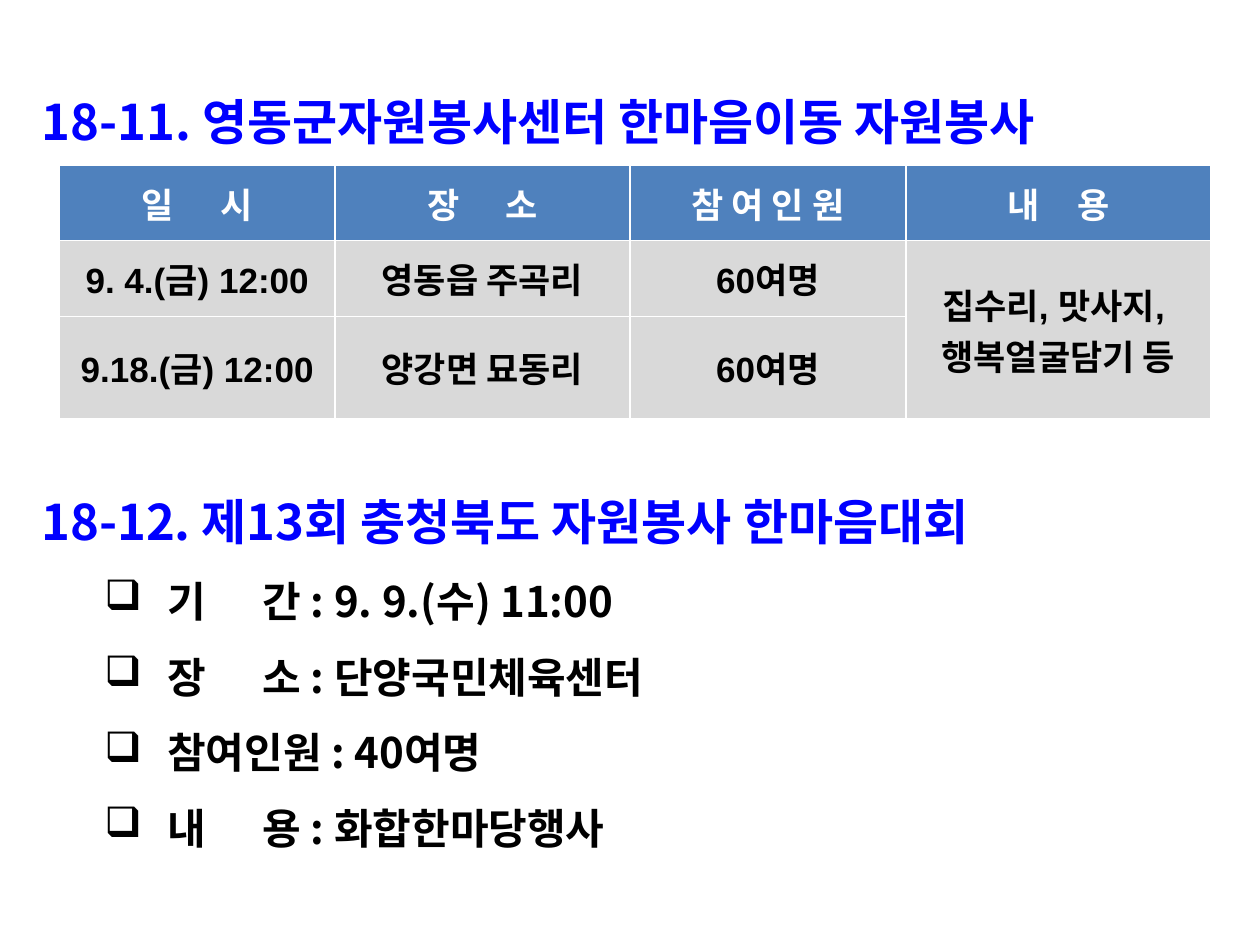
from lxml.etree import SubElement
from pptx import Presentation
from pptx.dml.color import RGBColor as RGB
from pptx.enum.text import MSO_ANCHOR as Anchor, MSO_AUTO_SIZE as AutoSize, PP_ALIGN as Align
from pptx.oxml.ns import qn
from pptx.util import Inches, Pt

COLORS = {"heading": "0000FF", "text": "000000", "header": "4F81BD",
          "body": "D9D9D9", "white": "FFFFFF"}
KOREAN = "Noto Sans CJK KR"


def write(paragraph, text, size, color, font=KOREAN, widen=0):
    """Add bold text; widen stretches its first space by that many points."""
    first, space, rest = text.partition(" ") if widen else (text, "", "")
    for part in filter(None, (first, space, rest)):
        run = paragraph.add_run()
        run.text = part
        run.font.size = Pt(size)
        run.font.bold = True
        run.font.name = font
        run.font.color.rgb = RGB.from_string(COLORS[color])
        props = run.font._element
        SubElement(props, qn("a:ea"), typeface=KOREAN)
        if part == " ":
            props.set("spc", str(widen * 100))


def box(left, top, width, height):
    """Turn percentages of the slide's size into lengths."""
    return (int(left * COL), int(top * ROW), int(width * COL), int(height * ROW))


prs = Presentation()
prs.slide_width, prs.slide_height = Inches(10), Inches(7.5)
COL, ROW = prs.slide_width / 100, prs.slide_height / 100
slide = prs.slides.add_slide(prs.slide_layouts[5])

# First activity: heading and schedule
title = slide.shapes.title
title.left, title.top, title.width, title.height = box(2.3, 5.87, 93.8, 44.13)
title_frame = title.text_frame
title_frame.auto_size = AutoSize.NONE
title_frame.word_wrap = True
title_frame.vertical_anchor = Anchor.TOP
heading = title_frame.paragraphs[0]
heading.alignment = Align.LEFT
heading.line_spacing = 1.5
write(heading, "18-11. 영동군자원봉사센터 한마음이동 자원봉사", 28, "heading")

headers = [("일 시", 22), ("장 소", 22), ("참 여 인 원", 0), ("내 용", 17)]
visits = [
    ["9. 4.(금) 12:00", "영동읍 주곡리", "60여명", "집수리, 맛사지, \n행복얼굴담기 등"],
    ["9.18.(금) 12:00", "양강면 묘동리", "60여명"],
]
schedule = slide.shapes.add_table(3, 4, *box(4.7, 17.47, 91.4, 24)).table
for column, share in zip(schedule.columns, (21.9, 23.4, 21.9, 24.2)):
    column.width = int(share * COL)
schedule.cell(1, 3).merge(schedule.cell(2, 3))

rows = [headers] + [[(text, 0) for text in visit] for visit in visits]
for r, entries in enumerate(rows):
    fill, color = ("body", "text") if r else ("header", "white")
    for c, (text, widen) in enumerate(entries):
        cell = schedule.cell(r, c)
        cell.fill.solid()
        cell.fill.fore_color.rgb = RGB.from_string(COLORS[fill])
        cell.vertical_anchor = Anchor.MIDDLE
        for i, line in enumerate(text.split("\n")):
            frame = cell.text_frame
            paragraph = frame.add_paragraph() if i else frame.paragraphs[0]
            paragraph.alignment = Align.CENTER
            write(paragraph, line, 20, color, "Arial", widen)

# Second activity: heading and bulleted details
details = slide.shapes.add_textbox(*box(2.3, 48.27, 90.6, 43.73)).text_frame
details.word_wrap = True
heading = details.paragraphs[0]
heading.line_spacing = 1.5
write(heading, "18-12. 제13회 충청북도 자원봉사 한마음대회", 28, "heading")

facts = [("기 간 : 9. 9.(수) 11:00", 27), ("장 소 : 단양국민체육센터", 27),
         ("참여인원 : 40여명", 0), ("내 용 : 화합한마당행사", 27)]
for text, widen in facts:
    fact = details.add_paragraph()
    fact.level = 1
    props = fact._p.get_or_add_pPr()
    props.set("marL", str(Inches(1)))
    props.set("indent", str(Inches(-0.5)))
    SubElement(SubElement(props, qn("a:buClr")), qn("a:srgbClr"), val=COLORS["text"])
    SubElement(props, qn("a:buChar"), char="❑")
    fact.line_spacing = 1.5
    write(fact, text, 24, "text", widen=widen)

prs.save("out.pptx")
